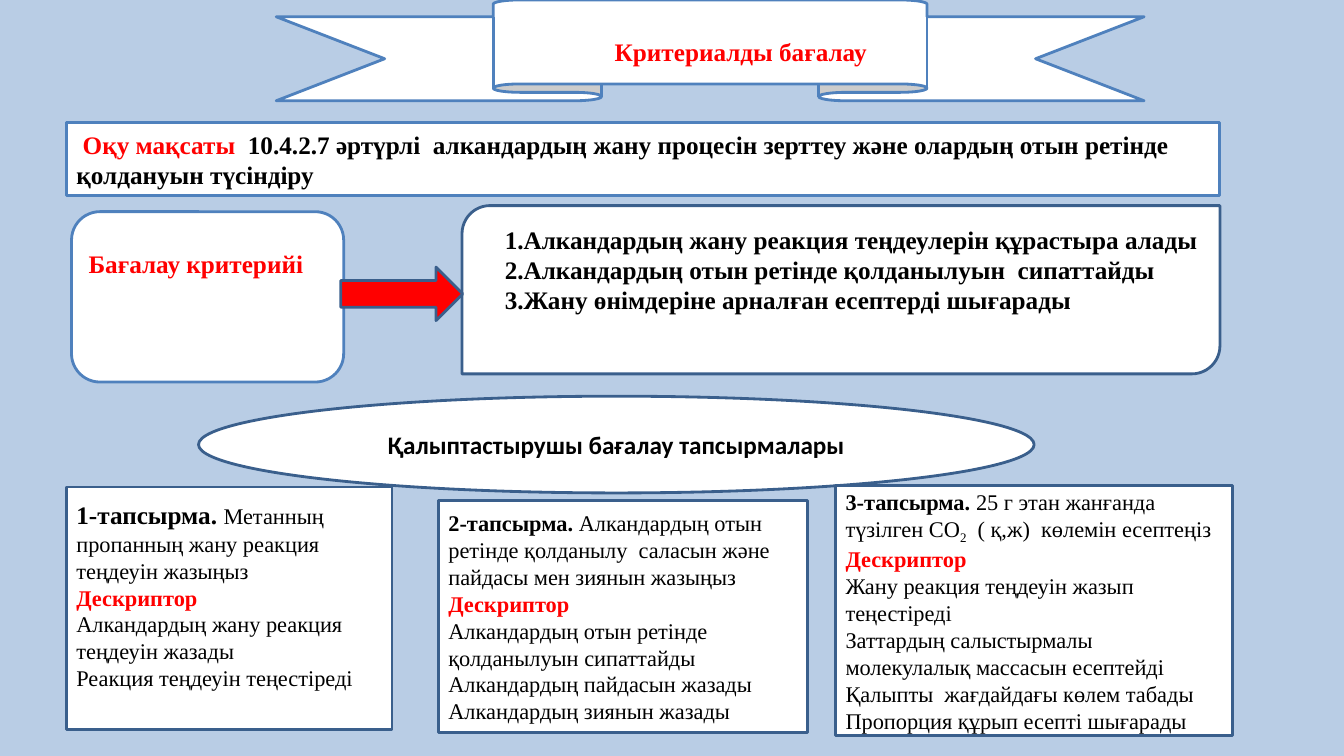
from pptx import Presentation
from pptx.dml.color import RGBColor
from pptx.enum import shapes, text
from pptx.util import Pt

SKY = RGBColor(0xB9, 0xCD, 0xE5)
WHITE = RGBColor(0xFF, 0xFF, 0xFF)
BLACK = RGBColor(0, 0, 0)
RED = RGBColor(0xFF, 0, 0)
BLUE = RGBColor(0x4F, 0x81, 0xBD)
NAVY = RGBColor(0x3A, 0x5F, 0x8C)
SERIF, SANS = "Times New Roman", "Calibri"

# Content: a paragraph is a list of (words, format) runs
BOLD, HEAD, PLAIN = {"bold": True}, {"bold": True, "color": RED}, {}
TITLE = [[("Критериалды бағалау", HEAD)]]
GOAL = [[
    (" ", BOLD),
    ("Оқу мақсаты  ", HEAD),
    ("10.4.2.7 әртүрлі  алкандардың жану процесін зерттеу және олардың "
     "отын ретінде қолдануын түсіндіру", BOLD),
]]
CRITERION = [[("Бағалау критерийі", HEAD)]]
CRITERIA = [[(line, BOLD)] for line in (
    "1.Алкандардың жану реакция теңдеулерін құрастыра алады",
    "2.Алкандардың отын ретінде қолданылуын  сипаттайды",
    "3.Жану өнімдеріне арналған есептерді шығарады",
)]
TASKS_HEADING = [[("Қалыптастырушы бағалау тапсырмалары", {"bold": True, "font": SANS})]]
DESCRIPTOR = "Дескриптор"
TASKS = [
    {"box": (47.5, 347.8, 232.6, 173.5), "bottom": 22,
     "question": [("1-тапсырма. ", {"bold": True, "size": 18}),
                  ("Метанның пропанның жану реакция теңдеуін жазыңыз", PLAIN)],
     "descriptors": ["Алкандардың жану реакция теңдеуін жазады",
                     "Реакция теңдеуін теңестіреді"]},
    {"box": (313.2, 357.8, 263.5, 165.6), "bottom": 3.6,
     "question": [("2-тапсырма.", BOLD),
                  (" Алкандардың отын ретінде қолданылу  саласын және  "
                   "пайдасы мен зиянын жазыңыз", PLAIN)],
     "descriptors": ["Алкандардың отын ретінде қолданылуын сипаттайды",
                     "Алкандардың пайдасын жазады",
                     "Алкандардың зиянын жазады"]},
    {"box": (596.9, 347, 283.7, 178.6), "bottom": 3.6,
     "question": [("3-тапсырма. ", BOLD),
                  ("25 г этан жанғанда түзілген СО", PLAIN),
                  ("2", {"baseline": -25000}),
                  ("  ( қ,ж)  көлемін есептеңіз", PLAIN)],
     "descriptors": ["Жану реакция теңдеуін жазып теңестіреді",
                     "Заттардың салыстырмалы молекулалық массасын есептейді",
                     "Қалыпты  жағдайдағы көлем табады",
                     "Пропорция құрып есепті шығарады"]},
]

deck = Presentation()
deck.slide_width, deck.slide_height = Pt(960), Pt(540)
slide = deck.slides.add_slide(deck.slide_layouts[6])
slide.background.fill.solid()
slide.background.fill.fore_color.rgb = SKY


def add_run(paragraph, words, size=18, font=SERIF, color=BLACK, bold=False, baseline=0):
    run = paragraph.add_run()
    run.text = words
    run.font.size, run.font.name, run.font.bold = Pt(size), font, bold
    run.font.color.rgb = color
    if baseline:
        run.font._element.set("baseline", str(baseline))


def write(holder, paragraphs, size=18, align=text.PP_ALIGN.LEFT, bottom=3.6):
    frame = holder.text_frame
    frame.word_wrap = True
    frame.vertical_anchor = text.MSO_ANCHOR.MIDDLE
    frame.margin_bottom = Pt(bottom)
    for i, runs in enumerate(paragraphs):
        paragraph = frame.paragraphs[0] if i == 0 else frame.add_paragraph()
        paragraph.alignment = align
        for words, style in runs:
            add_run(paragraph, words, **{"size": size, **style})


def add_panel(kind, box, fill=WHITE, line=NAVY):
    panel = slide.shapes.add_shape(kind, *map(Pt, box))
    panel.shadow.inherit = False
    panel.fill.solid()
    panel.fill.fore_color.rgb = fill
    panel.line.color.rgb = line
    panel.line.width = Pt(2)
    return panel


def add_label(box, paragraphs):
    write(slide.shapes.add_textbox(*map(Pt, box)), paragraphs)


KIND = shapes.MSO_SHAPE

# Title ribbon
add_panel(KIND.UP_RIBBON, (197.3, 0, 619.9, 72), line=BLUE)
add_label((432, 22, 220, 29.1), TITLE)

# Learning goal
write(add_panel(KIND.RECTANGLE, (47.5, 87.8, 823.7, 51.8), line=BLUE), GOAL)

# Assessment criteria
add_panel(KIND.ROUNDED_RECTANGLE, (51.1, 151.2, 194.4, 121.7), line=BLUE)
add_label((56.2, 173.5, 190.8, 29.1), CRITERION)
add_panel(KIND.ROUND_2_DIAG_RECTANGLE, (330, 146.9, 541.4, 120.2))
add_label((353.5, 156.2, 540, 72.7), CRITERIA)
add_panel(KIND.RIGHT_ARROW, (243.4, 190.8, 87.1, 38.2), fill=RED)

# Formative tasks
write(add_panel(KIND.OVAL, (141.8, 283, 596.9, 69.1)), TASKS_HEADING,
      align=text.PP_ALIGN.CENTER)
for task in TASKS:
    paragraphs = [task["question"], [(DESCRIPTOR, HEAD)]]
    paragraphs += [[(line, PLAIN)] for line in task["descriptors"]]
    write(add_panel(KIND.RECTANGLE, task["box"]), paragraphs, size=16, bottom=task["bottom"])

deck.save("out.pptx")
